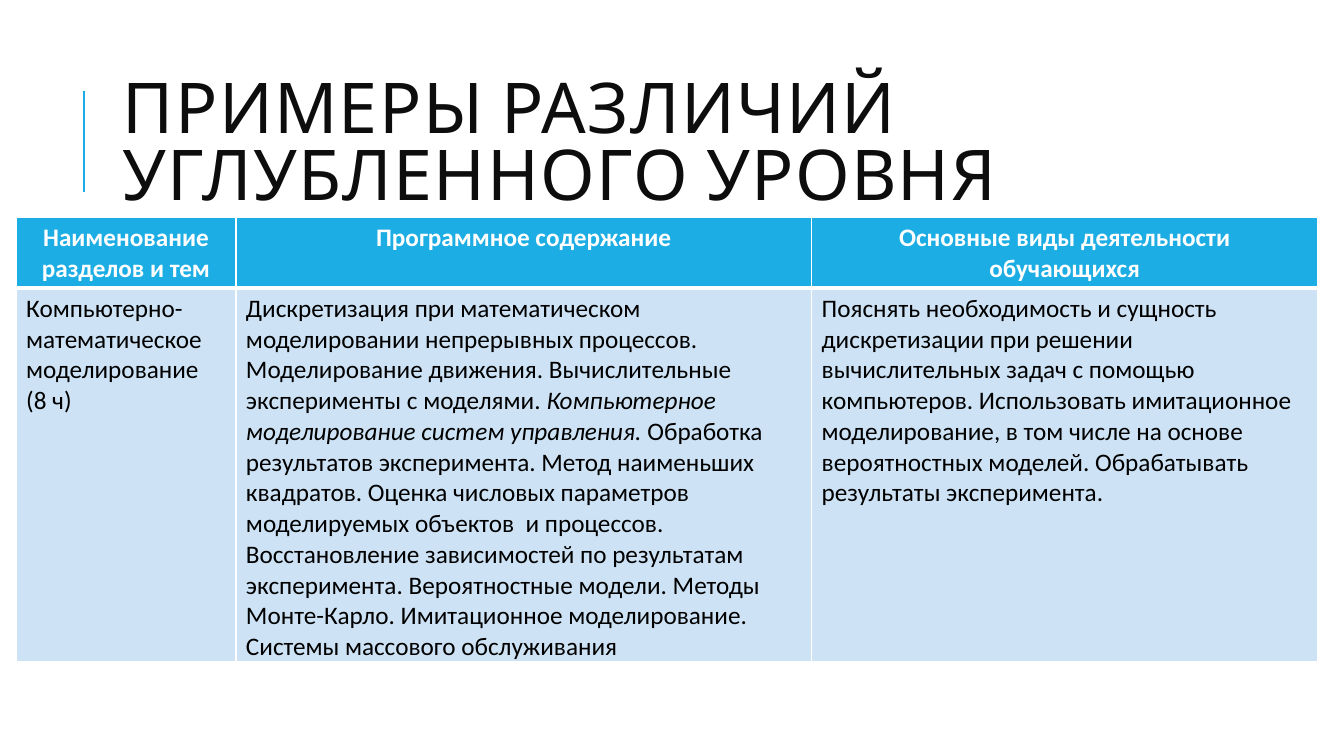
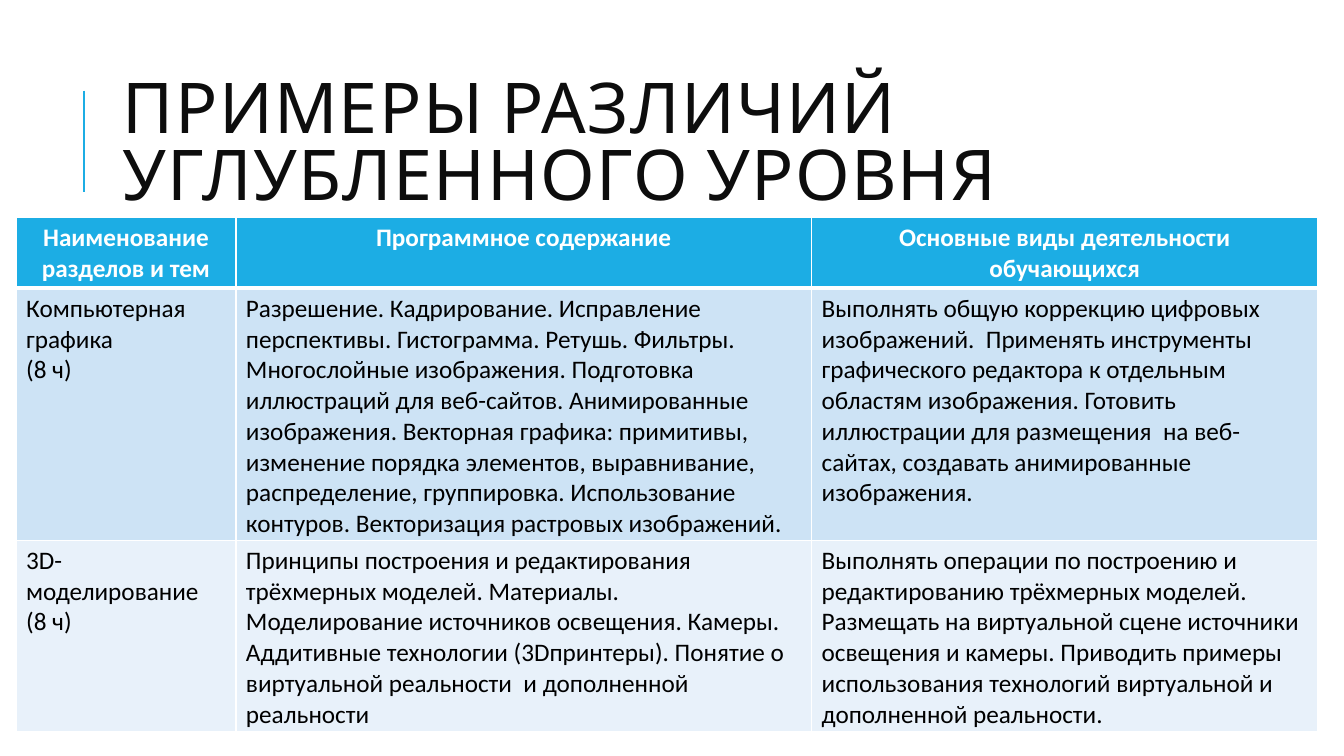
from dataclasses import dataclass

from lxml.etree import SubElement as Sub
from pptx import Presentation
from pptx.dml.color import RGBColor as RGB
from pptx.enum.shapes import MSO_CONNECTOR as Conn
from pptx.enum.text import MSO_ANCHOR as Anchor, PP_ALIGN as Align
from pptx.oxml.ns import qn
from pptx.util import Inches, Pt


@dataclass(frozen=True)
class Theme:
    accent: str = "1CADE4"
    ink: str = "0D0D0D"
    black: str = "000000"
    white: str = "FFFFFF"
    bands: tuple = ("CDE3F5", "E8F1FA")
    head: str = "Cabin"
    body: str = "Calibri"
    big: int = 50
    small: int = 18
    thin: int = 1
    thick: int = 3


TITLE = "ПРИМЕРЫ РАЗЛИЧИЙ УГЛУБЛЕННОГО УРОВНЯ"
COLS = (2.18, 5.71, 5.02)
HEADS = (
    "Наименование\nразделов и тем",
    "Программное содержание",
    "Основные виды деятельности\nобучающихся",
)
HEAD_H = 0.7

# Each slide lists its rows as (height, cells); *stars* mark italics
SLIDES = [
    [
        (3.7, (
            "Компьютерно-математическое моделирование\n(8 ч)",
            "Дискретизация при математическом моделировании непрерывных "
            "процессов. Моделирование движения. Вычислительные эксперименты "
            "с моделями. *Компьютерное моделирование систем управления.* "
            "Обработка результатов эксперимента. Метод наименьших квадратов. "
            "Оценка числовых параметров моделируемых объектов  и процессов. "
            "Восстановление зависимостей по результатам эксперимента. "
            "Вероятностные модели. Методы Монте-Карло. Имитационное "
            "моделирование. Системы массового обслуживания",
            "Пояснять необходимость и сущность дискретизации при решении "
            "вычислительных задач с помощью компьютеров. Использовать "
            "имитационное моделирование, в том числе на основе вероятностных "
            "моделей. Обрабатывать результаты эксперимента.",
        )),
    ],
    [
        (2.5, (
            "Компьютерная графика\n(8 ч)",
            "Разрешение. Кадрирование. Исправление перспективы. Гистограмма. "
            "Ретушь. Фильтры. Многослойные изображения. Подготовка "
            "иллюстраций для веб-сайтов. Анимированные изображения. "
            "Векторная графика: примитивы, изменение порядка элементов, "
            "выравнивание, распределение, группировка. Использование "
            "контуров. Векторизация растровых изображений.",
            "Выполнять общую коррекцию цифровых изображений.  Применять "
            "инструменты\nграфического редактора к отдельным областям "
            "изображения. Готовить иллюстрации для размещения  на "
            "веб-сайтах, создавать анимированные изображения.",
        )),
        (1.9, (
            "3D-моделирование\n(8 ч)",
            "Принципы построения и редактирования трёхмерных моделей. "
            "Материалы. Моделирование источников освещения. Камеры. "
            "Аддитивные технологии (3Dпринтеры). Понятие о виртуальной "
            "реальности  и дополненной реальности",
            "Выполнять операции по построению и редактированию трёхмерных "
            "моделей. Размещать на виртуальной сцене источники освещения и "
            "камеры. Приводить примеры использования технологий виртуальной "
            "и дополненной реальности.",
        )),
    ],
]


class Deck:
    def __init__(self, theme):
        self.theme = theme
        self.prs = Presentation()
        self.prs.slide_width = Inches(13.33)
        self.prs.slide_height = Inches(7.5)
        self.slide = None

    def page(self):
        self.slide = self.prs.slides.add_slide(self.prs.slide_layouts[6])

    def font(self, para, name, size, color, bold=False):
        font = para.font
        font.name, font.size, font.bold = name, Pt(size), bold
        font.color.rgb = RGB.from_string(color)

    def rule(self, x, top, end):
        line = self.slide.shapes.add_connector(
            Conn.STRAIGHT, Inches(x), Inches(top), Inches(x), Inches(end))
        line.line.color.rgb = RGB.from_string(self.theme.accent)
        line.line.width = Pt(1.5)
        Sub(line._element.spPr, qn("a:effectLst"))

    def title(self, text):
        box = self.slide.shapes.add_textbox(
            Inches(1.12), Inches(0.64), Inches(10.63), Inches(1.64))
        frame = box.text_frame
        frame.word_wrap = True
        frame.vertical_anchor = Anchor.MIDDLE
        para = frame.paragraphs[0]
        para.line_spacing = 0.8
        run = para.add_run()
        run.text = text
        # Letter spacing, in hundredths of a point
        run.font._element.set("spc", "100")
        self.font(para, self.theme.head, self.theme.big, self.theme.ink)

    def edges(self, cell, top, base):
        thin = self.theme.thin
        props = cell._tc.get_or_add_tcPr()
        for side, width in zip("LRTB", (thin, thin, top, base)):
            line = Sub(props, qn(f"a:ln{side}"), w=str(Pt(width)))
            fill = Sub(line, qn("a:solidFill"))
            Sub(fill, qn("a:srgbClr"), val=self.theme.white)

    def cell(self, cell, text, row):
        th = self.theme
        head = row == 0
        # Borders come before the fill in the cell properties
        self.edges(cell, th.thick if row == 1 else th.thin,
                   th.thick if head else th.thin)
        cell.fill.solid()
        shade = th.accent if head else th.bands[(row - 1) % 2]
        cell.fill.fore_color.rgb = RGB.from_string(shade)
        frame = cell.text_frame
        for i, part in enumerate(text.split("\n")):
            para = frame.add_paragraph() if i else frame.paragraphs[0]
            para.alignment = Align.CENTER if head else Align.LEFT
            for j, piece in enumerate(part.split("*")):
                run = para.add_run()
                run.text = piece
                if j % 2:
                    run.font.italic = True
            self.font(para, th.body, th.small,
                      th.white if head else th.black, head)

    def table(self, rows):
        rows = [(HEAD_H, HEADS), *rows]
        high = sum(h for h, _ in rows)
        grid = self.slide.shapes.add_table(
            len(rows), len(COLS), Inches(0.16), Inches(2.16),
            Inches(sum(COLS)), Inches(high)).table
        for col, width in zip(grid.columns, COLS):
            col.width = Inches(width)
        for r, (height, texts) in enumerate(rows):
            grid.rows[r].height = Inches(height)
            for c, text in enumerate(texts):
                self.cell(grid.cell(r, c), text, r)


def main():
    deck = Deck(Theme())
    for rows in SLIDES:
        deck.page()
        deck.rule(0.83, 0.9, 1.9)
        deck.title(TITLE)
        deck.table(rows)
    deck.prs.save("out.pptx")


if __name__ == "__main__":
    main()
